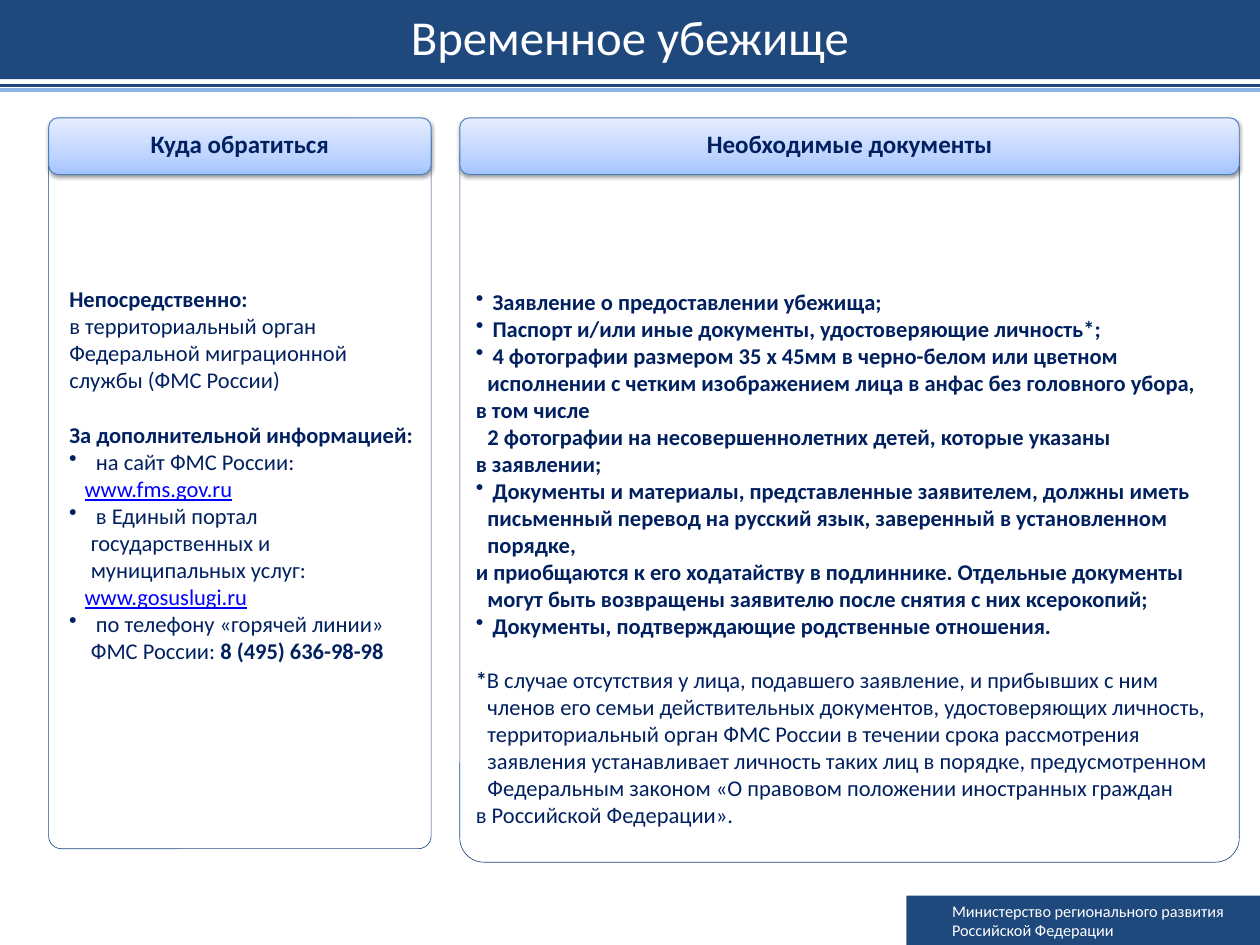
import copy

import pptx
import pptx.dml.color
import pptx.enum.shapes
import pptx.enum.text
import pptx.oxml
import pptx.oxml.ns
import pptx.oxml.xmlchemy
import pptx.util
from pptx.util import Inches

RGBColor = pptx.dml.color.RGBColor
Pt = pptx.util.Pt
ALIGN = pptx.enum.text.PP_ALIGN
ANCHOR = pptx.enum.text.MSO_ANCHOR
SHAPE = pptx.enum.shapes.MSO_SHAPE
qn = pptx.oxml.ns.qn
new_element = pptx.oxml.xmlchemy.OxmlElement

BLUE = RGBColor(0x1F, 0x49, 0x7D)
SKY = RGBColor(0x8E, 0xB4, 0xE3)
NAVY = RGBColor(0x00, 0x20, 0x60)
LINK = RGBColor(0x00, 0x00, 0xFF)
WHITE = RGBColor(0xFF, 0xFF, 0xFF)
HEADER_LINE = RGBColor(0x4B, 0x7E, 0xBC)
HEADER_STOPS = [(0, RGBColor(0xA4, 0xC4, 0xFF)),
                (0.35, RGBColor(0xBF, 0xD4, 0xFF)),
                (1, RGBColor(0xE6, 0xEE, 0xFF))]
SHADOW = (
    '<a:outerShdw xmlns:a="http://schemas.openxmlformats.org/drawingml/2006/main" '
    'blurRad="39370" dist="20320" dir="5400000" rotWithShape="0">'
    '<a:srgbClr val="000000"><a:alpha val="38000"/></a:srgbClr></a:outerShdw>')


class SlideBuilder:
    font = "Calibri"

    def __init__(self, slide):
        self.slide = slide

    def box(self, kind, left, top, width, height, fill=None, line=None, line_width=0.5,
            insets=(0.1, 0.05, 0.1, 0.05), anchor=ANCHOR.MIDDLE):
        shape = self.slide.shapes.add_shape(
            kind, Inches(left), Inches(top), Inches(width), Inches(height))
        shape.shadow.inherit = False
        if fill is None:
            shape.fill.background()
        else:
            shape.fill.solid()
            shape.fill.fore_color.rgb = fill
        if line is None:
            shape.line.fill.background()
        else:
            shape.line.color.rgb = line
            shape.line.width = Pt(line_width)
        frame = shape.text_frame
        frame.word_wrap = True
        frame.vertical_anchor = anchor
        (frame.margin_left, frame.margin_top,
         frame.margin_right, frame.margin_bottom) = map(Inches, insets)
        return shape

    def rule(self, left, right, y, color):
        line = self.slide.shapes.add_connector(
            pptx.enum.shapes.MSO_CONNECTOR.STRAIGHT,
            Inches(left), Inches(y), Inches(right), Inches(y))
        line.line.color.rgb = color
        line.line.width = Pt(3)
        line._element.spPr.append(new_element("a:effectLst"))

    def style(self, run, size, color=NAVY, bold=False, underline=False):
        run.font.name = self.font
        run.font.size = Pt(size)
        run.font.color.rgb = color
        run.font.bold = bold
        run.font.underline = underline

    def indent(self, paragraph, margin, first, bullet=False):
        properties = paragraph._p.get_or_add_pPr()
        properties.set("marL", str(Inches(margin)))
        properties.set("indent", str(Inches(first)))
        if bullet:
            mark = new_element("a:buChar")
            mark.set("char", "•")
            properties.append(mark)

    def caption(self, shape, text, size, color, bold=False, spacing=None,
                align=ALIGN.CENTER):
        paragraph = shape.text_frame.paragraphs[0]
        paragraph.text = text
        paragraph.alignment = align
        if spacing:
            paragraph.line_spacing = Pt(spacing)
        for run in paragraph.runs:
            self.style(run, size, color, bold)
        return paragraph

    def header(self, left, width, text):
        shape = self.box(SHAPE.ROUNDED_RECTANGLE, left, 1.31, width, 0.63,
                         line=HEADER_LINE, line_width=0.75, insets=(0, 0.05, 0, 0.05))
        shape.fill.gradient()
        shape.fill.gradient_angle = 90
        properties = shape._element.spPr
        stops = properties.find(".//" + qn("a:gsLst"))
        stops.insert(1, copy.deepcopy(stops[0]))
        for stop, (position, color) in zip(shape.fill.gradient_stops, HEADER_STOPS):
            stop.position = position
            stop.color.rgb = color
        properties.find(qn("a:effectLst")).append(pptx.oxml.parse_xml(SHADOW))
        self.caption(shape, text, 20, NAVY, bold=True, spacing=19.6)

    def panel(self, left, top, width, height, paragraphs, indents, insets, anchor):
        """Each paragraph is (kind, space before, [(text, run format), ...])."""
        shape = self.box(SHAPE.ROUNDED_RECTANGLE, left, top, width, height,
                         line=BLUE, insets=insets, anchor=anchor)
        shape.adjustments[0] = 0.033
        frame = shape.text_frame
        for number, (kind, before, parts) in enumerate(paragraphs):
            paragraph = frame.add_paragraph() if number else frame.paragraphs[0]
            self.indent(paragraph, *indents[kind], bullet=kind == "bullet")
            paragraph.alignment = ALIGN.LEFT
            paragraph.space_before = Pt(before)
            paragraph.text = parts[0][0]
            for run in paragraph.runs:
                self.style(run, 18, **parts[0][1])
            for text, run_format in parts[1:]:
                run = paragraph.add_run()
                run.text = text
                self.style(run, 18, **run_format)


PLAIN = {}
BOLD = {"bold": True}
URL = {"color": LINK, "underline": True}
BLANK_LINE = 22

CONTACTS = [
    ("text", 0, [("Непосредственно:", BOLD)]),
    ("text", 0, [("в территориальный орган Федеральной миграционной службы (ФМС России)", PLAIN)]),
    ("text", BLANK_LINE, [("За дополнительной информацией:", BOLD)]),
    ("bullet", 0, [(" на сайт ФМС России:", PLAIN)]),
    ("link", 0, [("www.fms.gov.ru", URL)]),
    ("bullet", 0, [(" в Единый портал государственных и муниципальных услуг:", PLAIN)]),
    ("link", 0, [("www.gosuslugi.ru", URL)]),
    ("bullet", 0, [(" по телефону «горячей линии»\vФМС России:", PLAIN),
                   (" 8 (495) 636-98-98", BOLD)]),
]

DOCUMENTS = [
    ("bullet", 0, [(" Заявление о предоставлении убежища;", BOLD)]),
    ("bullet", 0, [(" Паспорт и/или иные документы, удостоверяющие личность*;", BOLD)]),
    ("bullet", 0, [(" 4 фотографии размером 35 х 45мм в черно-белом или цветном исполнении "
                    "с четким изображением лица в анфас без головного убора,", BOLD)]),
    ("text", 0, [("в том числе\v2 фотографии на несовершеннолетних детей, которые указаны", BOLD)]),
    ("text", 0, [("в заявлении;", BOLD)]),
    ("bullet", 0, [(" Документы и материалы, представленные заявителем, должны иметь письменный "
                    "перевод на русский язык, заверенный в установленном порядке,", BOLD)]),
    ("text", 0, [("и приобщаются к его ходатайству в подлиннике. Отдельные документы могут "
                  "быть возвращены заявителю после снятия с них ксерокопий;", BOLD)]),
    ("bullet", 0, [(" Документы, подтверждающие родственные отношения.", BOLD)]),
    ("text", BLANK_LINE, [
        ("*", BOLD),
        ("В случае отсутствия у лица, подавшего заявление, и прибывших с ним членов его семьи "
         "действительных документов, удостоверяющих личность, территориальный орган ФМС России "
         "в течении срока рассмотрения заявления устанавливает личность таких лиц в порядке, "
         "предусмотренном Федеральным законом «О правовом положении иностранных граждан", PLAIN)]),
    ("text", 0, [("в Российской Федерации».", PLAIN)]),
]


def main():
    deck = pptx.Presentation()
    deck.slide_width, deck.slide_height = Inches(14), Inches(10.5)
    builder = SlideBuilder(deck.slides.add_slide(deck.slide_layouts[6]))

    # Ministry footer and rules under the title
    ministry = builder.box(SHAPE.RECTANGLE, 10.07, 9.95, 3.94, 0.55, fill=BLUE)
    name = builder.caption(ministry, "Министерство регионального развития\vРоссийской Федерации",
                           13, WHITE, align=ALIGN.LEFT)
    builder.indent(name, 0.41, 0)
    builder.rule(0, 14, 0.95, BLUE)
    builder.rule(-0.04, 14.01, 1, SKY)

    # Where to apply
    builder.panel(0.54, 1.38, 4.25, 8.05, CONTACTS,
                  {"text": (0.09, 0), "bullet": (0.33, -0.24), "link": (0.26, 0)},
                  (0.1, 1.75, 0.1, 0.05), ANCHOR.TOP)
    builder.header(0.54, 4.25, "Куда обратиться")

    # Required documents
    hanging = (0.13, -0.13)
    builder.panel(5.11, 1.47, 8.66, 8.11, DOCUMENTS, {"text": hanging, "bullet": hanging},
                  (0.1, 0.05, 0.1, 0.3), ANCHOR.BOTTOM)
    builder.header(5.11, 8.66, "Необходимые документы")

    # Title band
    title = builder.box(SHAPE.RECTANGLE, 0, 0, 14, 0.88, fill=BLUE,
                        insets=(0.14, 0.07, 0.14, 0.07))
    builder.caption(title, "Временное убежище", 39, WHITE, spacing=40.6)

    deck.save("out.pptx")


if __name__ == "__main__":
    main()
